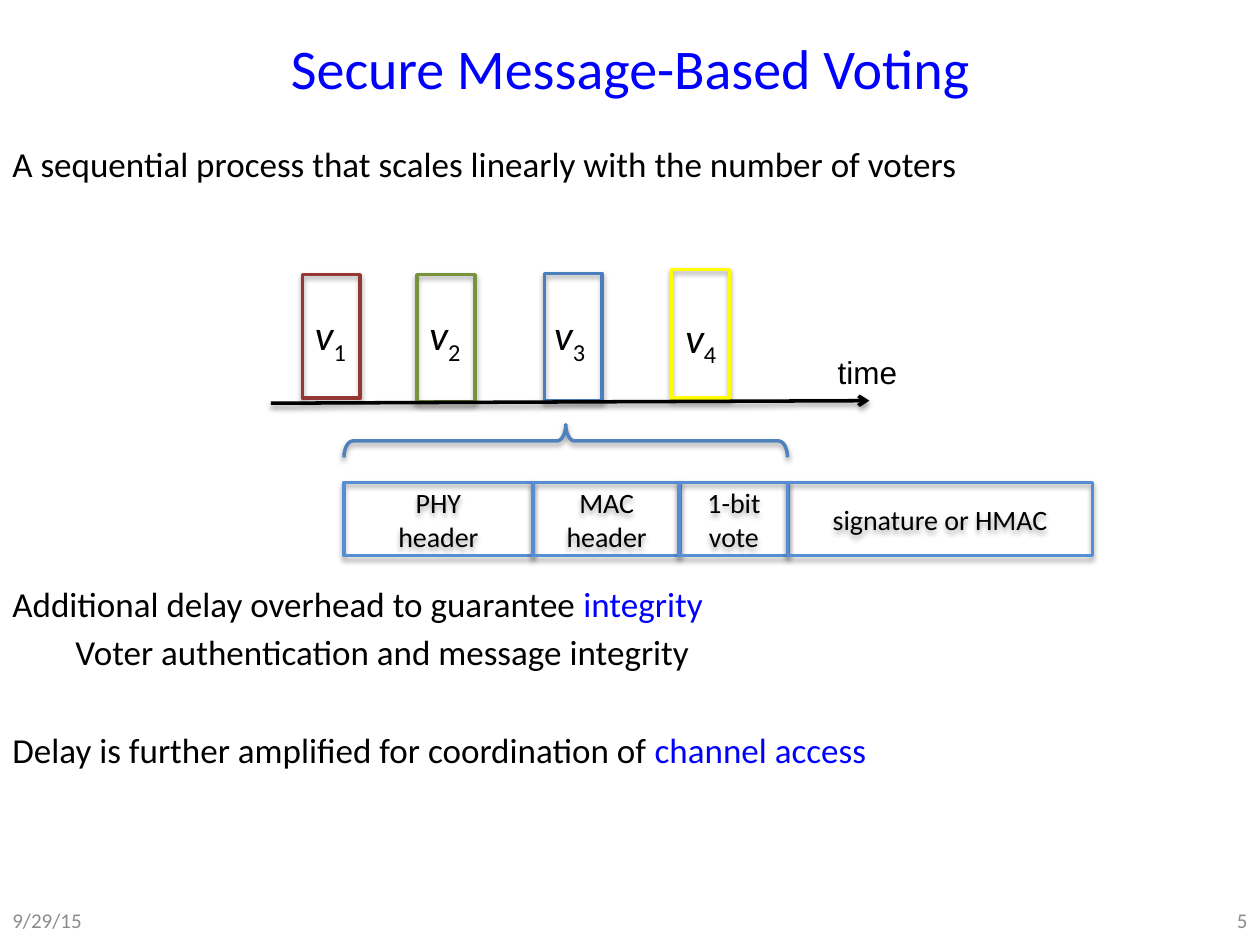
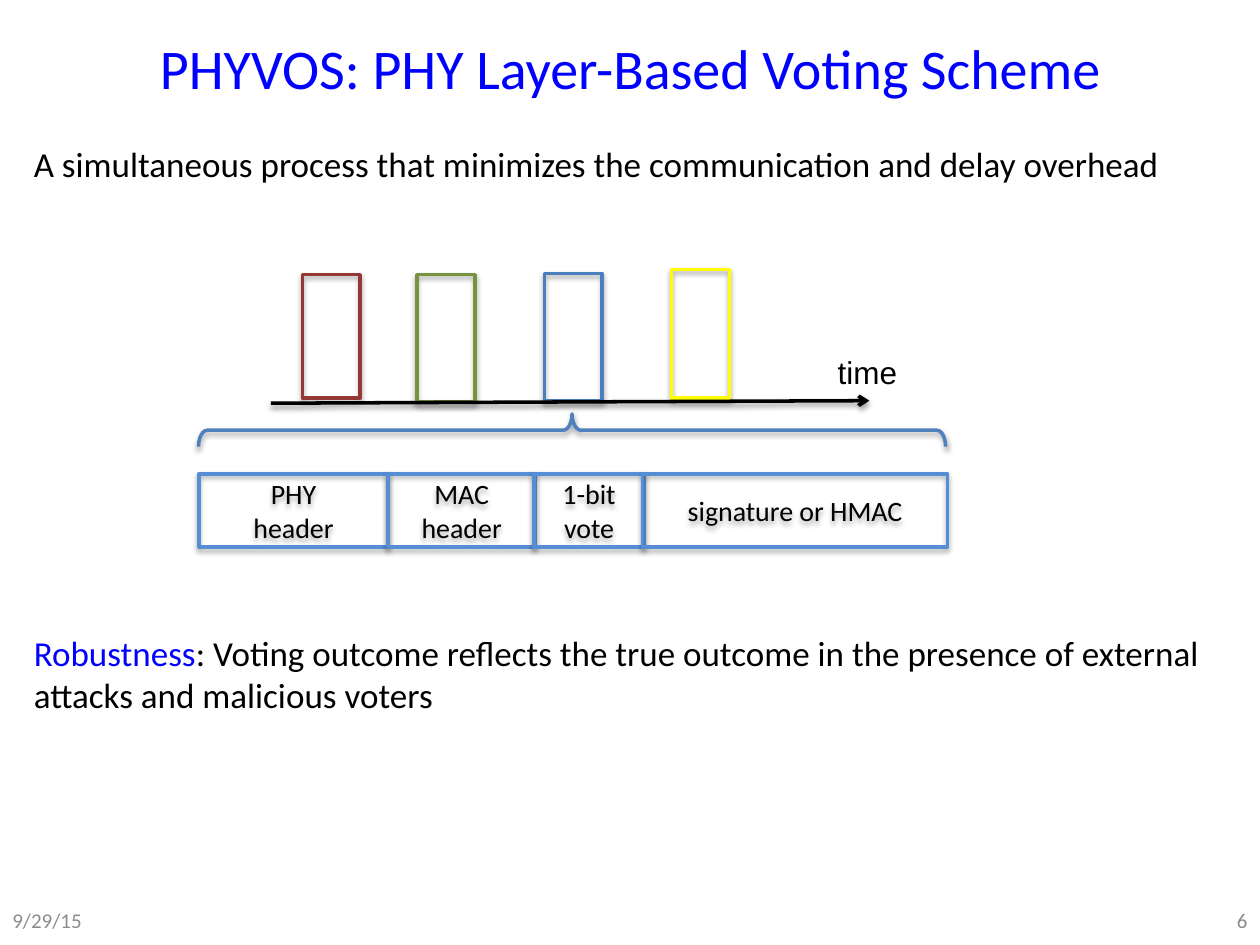
from dataclasses import dataclass

from lxml import etree
from pptx import Presentation
from pptx.dml.color import RGBColor
from pptx.enum.shapes import MSO_CONNECTOR, MSO_SHAPE
from pptx.enum.text import MSO_ANCHOR, PP_ALIGN
from pptx.oxml.ns import qn
from pptx.util import Pt

RECTANGLE, BRACE = MSO_SHAPE.RECTANGLE, MSO_SHAPE.LEFT_BRACE
STRAIGHT = MSO_CONNECTOR.STRAIGHT
LEFT, CENTER, RIGHT = PP_ALIGN.LEFT, PP_ALIGN.CENTER, PP_ALIGN.RIGHT
TOP, MIDDLE = MSO_ANCHOR.TOP, MSO_ANCHOR.MIDDLE
BLANK_LAYOUT = 6
EMU_PER_PX = 9144  # 100 px to the inch
PAGE_WIDTH, PAGE_HEIGHT = 1000, 750


@dataclass(frozen=True)
class Theme:
    font: str = "Calibri"
    axis_font: str = "Arial"
    ink: str = "000000"
    accent: str = "0000FF"
    muted: str = "8C8C8C"
    field_line: str = "558ED5"
    brace_line: str = "4F81BD"
    title_size: float = 32
    voter_size: float = 24
    body_size: float = 20
    axis_size: float = 18
    field_size: float = 16
    footer_size: float = 12
    line_width: float = 2
    body_gap: float = 3.6
    body_pitch: float = 28


THEME = Theme()


@dataclass(frozen=True)
class Box:
    left: int
    top: int
    width: int
    height: int


@dataclass(frozen=True)
class Span:
    text: str
    color: str = THEME.ink
    italic: bool = False
    subscript: bool = False


@dataclass(frozen=True)
class Statement:
    """A body paragraph; skipped counts the line pitches left free above it."""
    spans: tuple[Span, ...]
    skipped: int = 0
    indent: int = 0


@dataclass(frozen=True)
class VoteSlot:
    box: Box
    color: str
    label_left: int
    label_top: int


@dataclass(frozen=True)
class Field:
    offset: int
    width: int
    text: str


@dataclass(frozen=True)
class VotingPage:
    number: int
    title: str
    body: Box
    statements: tuple[Statement, ...]
    fields_left: int
    fields_top: int
    brace_top: int
    brace_width: int
    labelled: bool


SLOTS = (
    VoteSlot(Box(240, 218, 46, 98), "953735", 240, 240),
    VoteSlot(Box(331, 218, 46, 101), "77933C", 331, 240),
    VoteSlot(Box(432, 217, 46, 101), "4B7EBC", 430, 240),
    VoteSlot(Box(533, 214, 46, 102), "FFFF00", 534, 242),
)
FIELDS = (
    Field(0, 150, "PHY\nheader"),
    Field(150, 117, "MAC header"),
    Field(266, 87, "1-bit vote"),
    Field(352, 242, "signature or HMAC"),
)
FIELD_HEIGHT = 58
BRACE_DEPTH = 26
PAGES = (
    VotingPage(
        5, "Secure Message-Based Voting", Box(0, 108, 1000, 525),
        (
            Statement((Span("A sequential process that scales linearly with the number of voters"),)),
            Statement((Span("Additional delay overhead to guarantee "),
                       Span("integrity", THEME.accent)), skipped=8),
            Statement((Span("Voter authentication and message integrity"),), indent=50),
            Statement((Span("Delay is further amplified for coordination of "),
                       Span("channel access", THEME.accent)), skipped=1),
        ),
        fields_left=273, fields_top=383, brace_top=337, brace_width=352, labelled=True),
    VotingPage(
        6, "PHYVOS: PHY Layer-Based Voting Scheme", Box(17, 108, 967, 525),
        (
            Statement((Span("A simultaneous process that minimizes the communication "
                            "and delay overhead"),)),
            Statement((Span("Robustness", THEME.accent),
                       Span(": Voting outcome reflects the true outcome in the presence of "
                            "external attacks and malicious voters")), skipped=9),
        ),
        fields_left=158, fields_top=376, brace_top=328, brace_width=593, labelled=False),
)


def px(length: float) -> int:
    return round(length * EMU_PER_PX)


def frame(box: Box) -> tuple[int, int, int, int]:
    return px(box.left), px(box.top), px(box.width), px(box.height)


def add_span(para, span: Span, size: float, font: str) -> None:
    run = para.add_run()
    run.text = span.text
    run.font.size = Pt(size)
    run.font.name = font
    run.font.italic = span.italic
    run.font.color.rgb = RGBColor.from_string(span.color)
    if span.subscript:
        run.font._element.set("baseline", "-25000")


def write_text(shape, text: str | tuple[Statement, ...], *, size: float,
               color: str = THEME.ink, font: str = THEME.font, align=LEFT,
               anchor=TOP, wrap: bool = True) -> None:
    """Fill a shape with plain lines, or with statements that carry their own spans."""
    if isinstance(text, str):
        text = tuple(Statement((Span(line, color),)) for line in text.split("\n"))
        spaced = False
    else:
        spaced = len(text) > 1
    text_frame = shape.text_frame
    text_frame.word_wrap = wrap
    text_frame.vertical_anchor = anchor
    for index, statement in enumerate(text):
        para = text_frame.add_paragraph() if index else text_frame.paragraphs[0]
        para.alignment = align
        if spaced:
            para.space_before = Pt(THEME.body_gap + THEME.body_pitch * statement.skipped)
        if statement.indent:
            para._p.get_or_add_pPr().set("marL", str(px(statement.indent)))
        for span in statement.spans:
            add_span(para, span, size, font)


def add_text(page, box: Box, text: str | tuple[Statement, ...], **text_format) -> None:
    write_text(page.shapes.add_textbox(*frame(box)), text, **text_format)


def cast_shadow(shape, distance: int, opacity: int) -> None:
    """Add a soft downward shadow; call it once fill and line are set."""
    effects = etree.SubElement(shape.element.spPr, qn("a:effectLst"))
    shadow = etree.SubElement(effects, qn("a:outerShdw"), blurRad="40000",
                              dist=str(distance), dir="5400000", rotWithShape="0")
    tint = etree.SubElement(shadow, qn("a:srgbClr"), val=THEME.ink)
    etree.SubElement(tint, qn("a:alpha"), val=str(opacity * 1000))


def set_line(shape, color: str) -> None:
    shape.line.color.rgb = RGBColor.from_string(color)
    shape.line.width = Pt(THEME.line_width)


def add_outline(page, kind, box: Box, color: str, distance: int = 23000, opacity: int = 35):
    """Add an unfilled shape with a coloured line and a shadow."""
    shape = page.shapes.add_shape(kind, *frame(box))
    shape.fill.background()
    set_line(shape, color)
    cast_shadow(shape, distance, opacity)
    return shape


def add_time_axis(page) -> None:
    axis = page.shapes.add_connector(STRAIGHT, px(215), px(320), px(690), px(318))
    set_line(axis, THEME.ink)
    etree.SubElement(axis.element.spPr.find(qn("a:ln")), qn("a:tailEnd"), type="arrow")
    cast_shadow(axis, 20000, 38)
    add_text(page, Box(655, 275, 70, 40), "time", size=THEME.axis_size, font=THEME.axis_font)


def add_slots(page, labelled: bool) -> None:
    for slot in SLOTS:
        add_outline(page, RECTANGLE, slot.box, slot.color)
    add_time_axis(page)
    if not labelled:
        return
    for number, slot in enumerate(SLOTS, start=1):
        label = Statement((Span("v", italic=True), Span(str(number), subscript=True)))
        add_text(page, Box(slot.label_left, slot.label_top, 49, 50), (label,),
                 size=THEME.voter_size, wrap=False)


def add_message(page, content: VotingPage) -> None:
    """Draw the message fields in a row under an upward brace."""
    for field in FIELDS:
        box = Box(content.fields_left + field.offset, content.fields_top,
                  field.width, FIELD_HEIGHT)
        shape = add_outline(page, RECTANGLE, box, THEME.field_line)
        write_text(shape, field.text, size=THEME.field_size, align=CENTER, anchor=MIDDLE)
    inset = (content.brace_width - BRACE_DEPTH) // 2
    upright = Box(content.fields_left + inset, content.brace_top - inset,
                  BRACE_DEPTH, content.brace_width)
    brace = add_outline(page, BRACE, upright, THEME.brace_line, 20000, 38)
    brace.rotation = 90
    brace.adjustments[0] = 0.27


def add_frame_texts(page, content: VotingPage) -> None:
    """Write the title, date and page number that every page carries."""
    add_text(page, Box(17, 17, 967, 73), content.title, size=THEME.title_size,
             color=THEME.accent, align=CENTER, anchor=MIDDLE)
    for left, text, align in ((0, "9/29/15", LEFT), (767, str(content.number), RIGHT)):
        add_text(page, Box(left, 710, 233, 40), text, size=THEME.footer_size,
                 color=THEME.muted, align=align, anchor=MIDDLE)


def main() -> None:
    deck = Presentation()
    deck.slide_width, deck.slide_height = px(PAGE_WIDTH), px(PAGE_HEIGHT)
    for content in PAGES:
        page = deck.slides.add_slide(deck.slide_layouts[BLANK_LAYOUT])
        add_text(page, content.body, content.statements, size=THEME.body_size)
        add_frame_texts(page, content)
        add_slots(page, content.labelled)
        add_message(page, content)
    deck.save("out.pptx")


if __name__ == "__main__":
    main()
